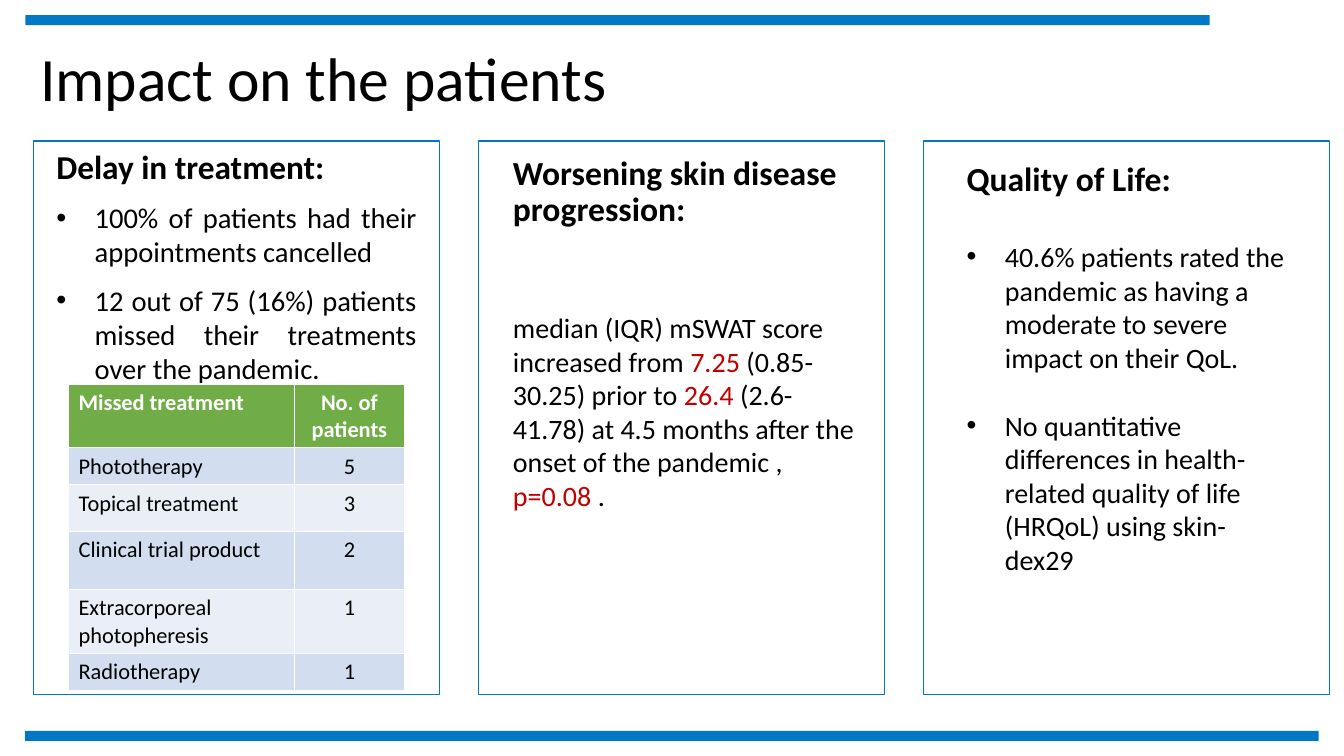
from lxml import etree
from pptx import Presentation
from pptx.dml.color import RGBColor
from pptx.enum.shapes import MSO_SHAPE
from pptx.enum.text import MSO_ANCHOR, PP_ALIGN
from pptx.oxml.ns import qn
from pptx.util import Inches, Pt

RECT = MSO_SHAPE.RECTANGLE
TOP, MIDDLE = MSO_ANCHOR.TOP, MSO_ANCHOR.MIDDLE
LEFT, CENTER, JUSTIFY = PP_ALIGN.LEFT, PP_ALIGN.CENTER, PP_ALIGN.JUSTIFY

BLUE = RGBColor(0x00, 0x78, 0xC5)
BLACK = RGBColor(0x00, 0x00, 0x00)
WHITE = RGBColor(0xFF, 0xFF, 0xFF)
RED = RGBColor(0xC0, 0x00, 0x00)
GREEN = RGBColor(0x70, 0xAD, 0x47)
BANDS = (RGBColor(0xD2, 0xDE, 0xEF), RGBColor(0xEA, 0xEF, 0xF7))


class Board:
    """Draws on one slide; all lengths are percent of its width or height."""

    font = "Calibri"
    hang = Inches(0.38)

    def __init__(self, deck):
        self.wide, self.high = deck.slide_width, deck.slide_height
        self.slide = deck.slides.add_slide(deck.slide_layouts[6])

    def across(self, share):
        return round(self.wide * share / 100)

    def down(self, share):
        return round(self.high * share / 100)

    def place(self, x, y, w, h):
        return self.across(x), self.down(y), self.across(w), self.down(h)

    def rect(self, area, fill=None, line=None):
        shape = self.slide.shapes.add_shape(RECT, *self.place(*area))
        shape.shadow.inherit = False
        if fill is None:
            shape.fill.background()
        else:
            shape.fill.solid()
            shape.fill.fore_color.rgb = fill
        if line is None:
            shape.line.fill.background()
        else:
            shape.line.color.rgb = line
            shape.line.width = Pt(1)

    def words(self, para, text, size, bold=False, color=BLACK):
        run = para.add_run()
        run.text = text
        style = {"name": self.font, "size": Pt(size), "bold": bold}
        for key, value in style.items():
            setattr(run.font, key, value)
        run.font.color.rgb = color

    def bullet(self, para):
        props = para._p.get_or_add_pPr()
        props.set("marL", str(self.hang))
        props.set("indent", str(-self.hang))
        etree.SubElement(props, qn("a:buFont")).set("typeface", "Arial")
        etree.SubElement(props, qn("a:buChar")).set("char", "•")

    def text(self, area, head=None, items=(), size=20, gaps=(), align=LEFT,
             space=1.0, head_size=24, bold=True, anchor=TOP):
        """Adds a box with a heading, then bullets, and returns its frame."""
        frame = self.slide.shapes.add_textbox(*self.place(*area)).text_frame
        frame.word_wrap = True
        frame.vertical_anchor = anchor
        para = frame.paragraphs[0]
        form = {"alignment": align, "line_spacing": space}
        for key, value in form.items():
            setattr(para, key, value)
        if head:
            self.words(para, head, head_size, bold)
        for item, gap in zip(items, gaps):
            para = frame.add_paragraph()
            self.bullet(para)
            for key, value in {**form, "space_before": Pt(gap)}.items():
                setattr(para, key, value)
            self.words(para, item, size)
        return frame

    def table(self, area, rows, widths, heights):
        frame = self.slide.shapes.add_table(
            len(rows), len(widths), *self.place(*area))
        grid = frame.table
        for col, width in zip(grid.columns, widths):
            col.width = self.across(width)
        for row, height in zip(grid.rows, heights):
            row.height = self.down(height)
        for i, row in enumerate(rows):
            top = i == 0
            for j, word in enumerate(row):
                cell = grid.cell(i, j)
                cell.fill.solid()
                cell.fill.fore_color.rgb = GREEN if top else BANDS[(i - 1) % 2]
                para = cell.text_frame.paragraphs[0]
                para.alignment = CENTER if j else LEFT
                self.words(para, word, 16, top, WHITE if top else BLACK)


def main():
    deck = Presentation()
    deck.slide_width, deck.slide_height = Inches(13.33), Inches(7.5)
    board = Board(deck)

    # Bars and title
    for y, width in ((2, 88.13), (96.67, 96.23)):
        board.rect((1.88, y, width, 1.33), fill=BLUE)
    board.text((2.25, 3.73, 46.88, 14), "Impact on the patients",
               space=0.9, head_size=44, bold=False, anchor=MIDDLE)

    # Three panels
    for i in range(3):
        board.rect((2.48 + 33.11 * i, 18.67, 30.23, 73.2), line=BLUE)

    # Delay in treatment
    board.text((3.45, 18.67, 28.28, 32), "Delay in treatment:", (
        "100% of patients had their appointments cancelled",
        "12 out of 75 (16%) patients missed their treatments "
        "over the pandemic.",
    ), size=20.4, gaps=(10, 10), align=JUSTIFY, head_size=23.8)
    heights = (7.73, 4.53, 6.13, 7.73, 7.73, 4.53)
    widths = (16.8, 8.2)
    board.table((5.1, 50.8, sum(widths), sum(heights)), (
        ("Missed treatment", "No. of patients"),
        ("Phototherapy", "5"),
        ("Topical treatment", "3"),
        ("Clinical trial product", "2"),
        ("Extracorporeal photopheresis", "1"),
        ("Radiotherapy", "1"),
    ), widths, heights)

    # Worsening skin disease
    board.text((37.43, 20, 28.43, 12), "Worsening skin disease progression:",
               space=0.9)
    score = board.text((37.43, 40.4, 27, 28.27)).paragraphs[0]
    for part, color in (
        ("median (IQR) mSWAT score increased from ", BLACK),
        ("7.25", RED),
        (" (0.85-30.25) prior to ", BLACK),
        ("26.4 ", RED),
        ("(2.6-41.78) at 4.5 months after the onset of the pandemic , ", BLACK),
        ("p=0.08 ", RED),
        (".", BLACK),
    ):
        board.words(score, part, 20, color=color)

    # Quality of life
    board.text((71.18, 20.27, 25.65, 61.07), "Quality of Life:", (
        "40.6% patients rated the pandemic as having a moderate to severe "
        "impact on their QoL.",
        "No quantitative differences in health-related quality of life "
        "(HRQoL) using skin-dex29",
    ), gaps=(29.3, 24.4))

    deck.save("out.pptx")


if __name__ == "__main__":
    main()
